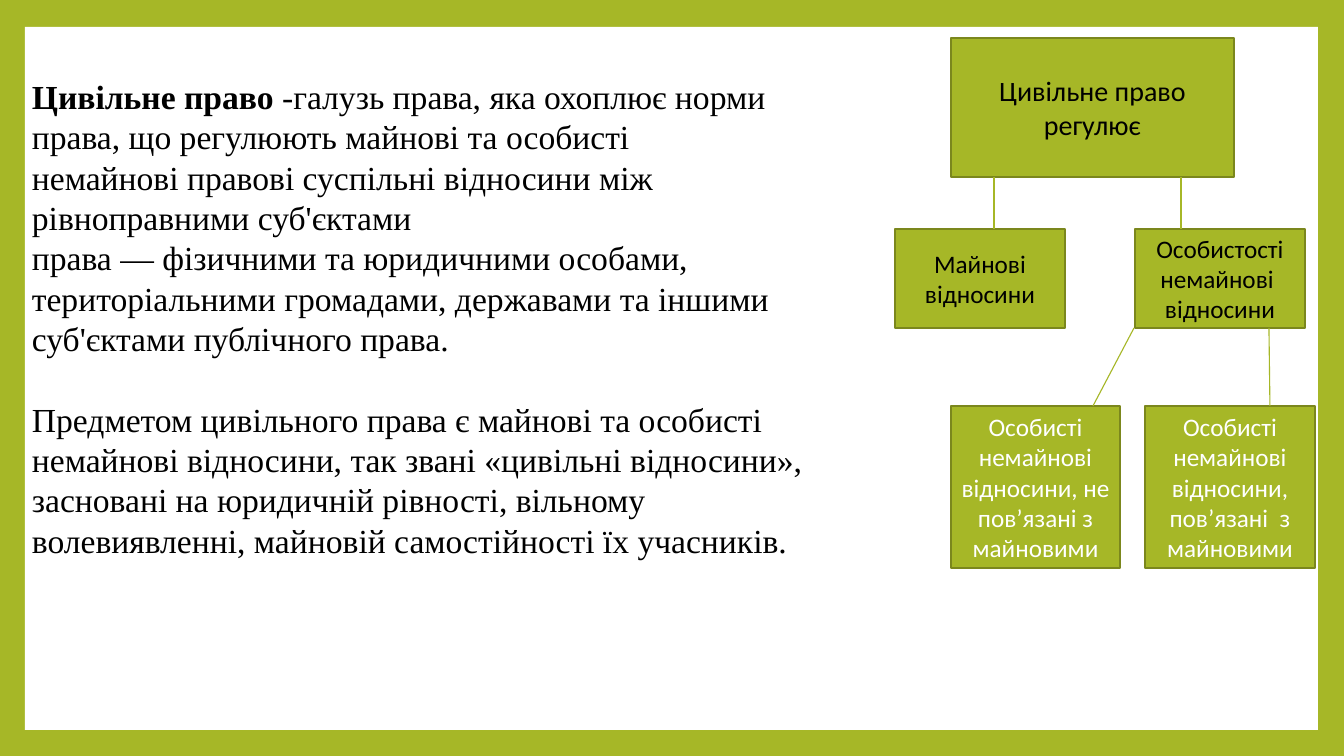
from pptx import Presentation, util as u
from pptx.dml.color import RGBColor
from pptx.enum import shapes, text
from lxml import etree

PX = 914400 / 100.8
GREEN = RGBColor(0xA6, 0xB7, 0x27)
OLIVE = RGBColor(0x7B, 0x87, 0x1D)
WHITE = RGBColor(0xFF, 0xFF, 0xFF)
BLACK = RGBColor(0, 0, 0)
NBSP = chr(160)  # written as ~ in the wording below


def px(*lengths):
    return [u.Emu(round(n * PX)) for n in lengths]


def add_box(s, bounds, fill):
    sp = s.shapes.add_shape(shapes.MSO_SHAPE.RECTANGLE, *px(*bounds))
    sp.shadow.inherit = False
    sp.fill.solid()
    sp.fill.fore_color.rgb = fill
    return sp


prs = Presentation()
prs.slide_width, prs.slide_height = px(1344, 756)
s = prs.slides.add_slide(prs.slide_layouts[6])

# Green frame around a white panel
s.background.fill.solid()
s.background.fill.fore_color.rgb = GREEN
add_box(s, (25, 27, 1293, 703), WHITE).line.fill.background()

# Definition and subject of civil law
LINE = u.Pt(28.8)
paragraphs = [
    [("Цивільне право ", True),
     ("-галузь~права, яка охоплює~норми права, що регулюють~майнові~та~особисті "
      "немайнові~правові~суспільні відносини~між рівноправними суб'єктами "
      "права~—~фізичними~та~юридичними особами, територіальними громадами,~"
      "державами~та іншими суб'єктами~публічного права.", False)],
    [("Предметом цивільного права є~майнові~та~особисті", False)],
    [("немайнові~відносини, так звані «цивільні відносини», засновані на юридичній "
      "рівності, вільному волевиявленні, майновій самостійності їх учасників.", False)],
]
tf = s.shapes.add_textbox(*px(22, 71, 829, 499)).text_frame
tf.word_wrap = True
for i, runs in enumerate(paragraphs):
    p = tf.paragraphs[0] if i == 0 else tf.add_paragraph()
    p.line_spacing = LINE
    p.space_before = LINE if i == 1 else u.Pt(0)
    p.font.size = u.Pt(24)
    p.font.name = "Times New Roman"
    p.font.color.rgb = BLACK
    for words, bold in runs:
        r = p.add_run()
        r.text = words.replace("~", NBSP)
        r.font.bold = bold

# Boxes of the diagram: bounds, size, colour, paragraphs
boxes = [
    ((951, 38, 283, 139), 20, BLACK, ["Цивільне право", "регулює"]),
    ((895, 229, 170, 99), 18, BLACK, ["Майнові відносини"]),
    ((1135, 229, 170, 99), 18, BLACK, ["Особистості немайнові~", "відносини"]),
    ((951, 406, 169, 162), 18, WHITE,
     ["Особисті немайнові", "відносини, не пов’язані з майновими"]),
    ((1145, 406, 170, 162), 18, WHITE,
     ["Особисті немайнові відносини, пов’язані~ з майновими"]),
]
for bounds, size, colour, lines in boxes:
    sp = add_box(s, bounds, GREEN)
    sp.line.color.rgb = OLIVE
    sp.line.width = u.Pt(1.5)
    tf = sp.text_frame
    tf.word_wrap = True
    tf.vertical_anchor = text.MSO_ANCHOR.MIDDLE
    for i, line in enumerate(lines):
        p = tf.paragraphs[0] if i == 0 else tf.add_paragraph()
        p.text = line.replace("~", NBSP)
        p.alignment = text.PP_ALIGN.CENTER
        p.font.size = u.Pt(size)
        p.font.name = "Calibri"
        p.font.color.rgb = colour

# Links between the boxes
for ends in [(994, 177, 994, 229), (1181, 177, 1181, 229),
             (1269, 328, 1270, 406), (1134, 328, 1093, 406)]:
    link = s.shapes.add_connector(shapes.MSO_CONNECTOR.STRAIGHT, *px(*ends))
    link.line.color.rgb = GREEN
    link.line.width = u.Pt(0.79)
    etree.SubElement(
        link._element.spPr,
        "{http://schemas.openxmlformats.org/drawingml/2006/main}effectLst")

prs.save("out.pptx")
